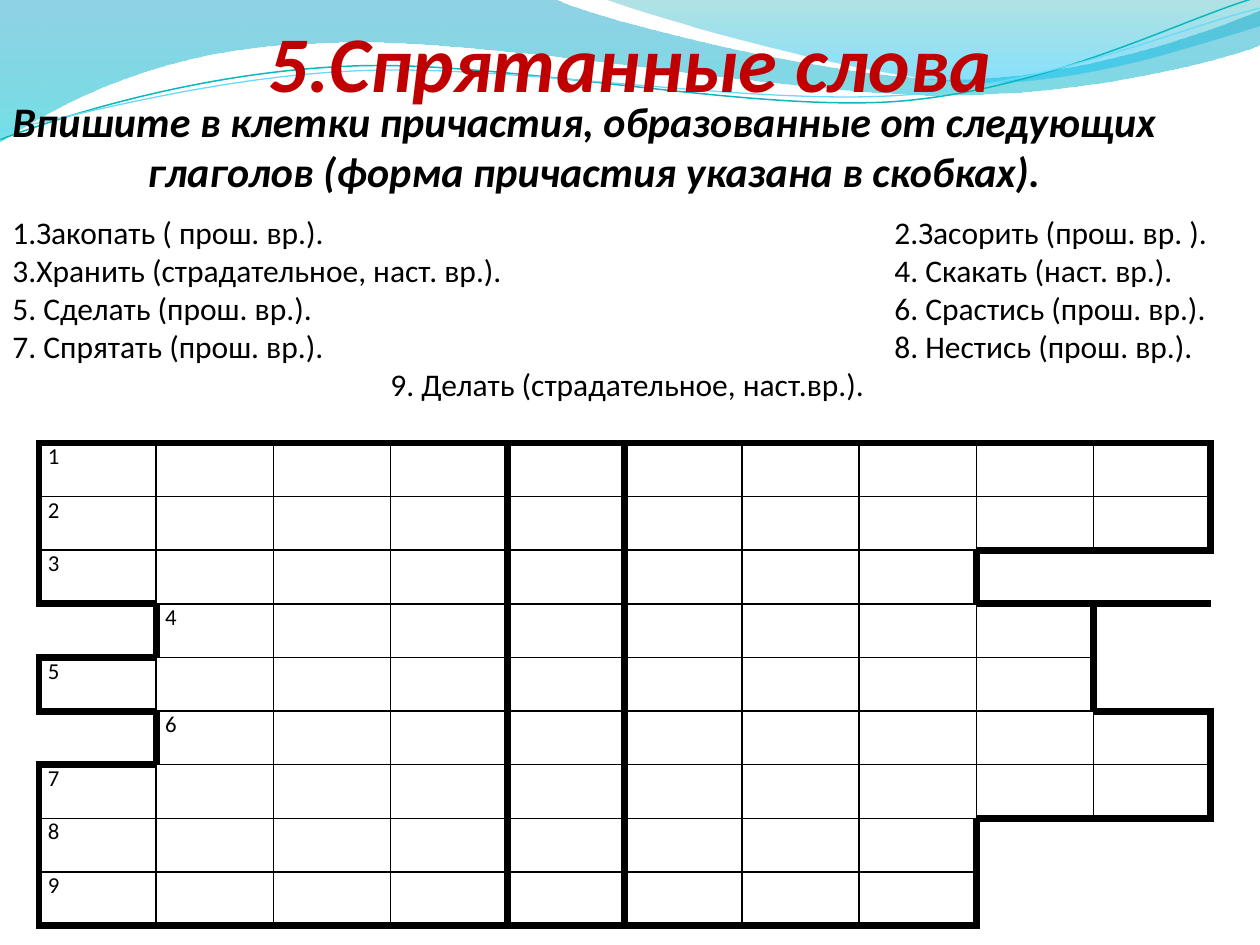
from itertools import chain, product

from lxml import etree
from pptx import Presentation
from pptx.dml.color import RGBColor
from pptx.enum.text import MSO_ANCHOR, MSO_AUTO_SIZE, PP_ALIGN
from pptx.oxml.ns import qn
from pptx.util import Emu, Pt

TOP, MIDDLE, BOTTOM = MSO_ANCHOR.TOP, MSO_ANCHOR.MIDDLE, MSO_ANCHOR.BOTTOM
CENTER, JUSTIFY = PP_ALIGN.CENTER, PP_ALIGN.JUSTIFY
GROW = MSO_AUTO_SIZE.SHAPE_TO_FIT_TEXT

BLACK = RGBColor(0x00, 0x00, 0x00)
RED = RGBColor(0xC0, 0x00, 0x00)
BLUE = RGBColor(0x08, 0x9D, 0xC7)
TURQUOISE = RGBColor(0x00, 0xC6, 0xCF)
TEAL = RGBColor(0x00, 0xA1, 0xA9)
SKY = RGBColor(0x00, 0xC0, 0xF6)
DARK_CYAN = RGBColor(0x0A, 0xB8, 0xBF)
LIGHT_CYAN = RGBColor(0x6A, 0xDA, 0xFA)

FONT = "Calibri"
EMU_PER_PX = 914400 / 126
LINE_TILT = 357.3
THICK, THIN = 4.5, 1

# A wave is a start point, then straight pieces (one point) and Bezier pieces (three).
# Gradient stops are position, colour and opacity in per cent.
WIDE_WAVE = ((0, 0), [
    [(554, -1)],
    [(600, 21), (837, 79), (955, 79)],
    [(1075, 79), (1207, 33), (1260, 11)],
    [(1261, 45)],
    [(1239, 55), (1096, 96), (940, 95)],
    [(784, 95), (481, 35), (324, 43)],
    [(163, 45), (58, 105), (-1, 142)],
], [(0, BLUE, 45), (1, TURQUOISE, 55)])
RIGHT_WAVE = ((604, -1), [
    [(641, 14), (859, 78), (969, 82)],
    [(1079, 87), (1211, 40), (1260, 26)],
    [(1260, 0)],
], [(0, TEAL, 30), (0.8, SKY, 45)])
UPPER_LINE = ((-2, 110), [
    [(58, 90), (199, 52), (350, 53)],
    [(499, 53), (745, 118), (896, 114)],
    [(1049, 109), (1184, 45), (1260, 27)],
], DARK_CYAN, 0.85)
LOWER_LINE = ((-2, 101), [
    [(58, 94), (207, 57), (358, 58)],
    [(509, 58), (750, 112), (902, 108)],
    [(1052, 104), (1188, 52), (1262, 38)],
], LIGHT_CYAN, 0.75)

# Clue text with the position of its tab stop.
CLUES = [
    ("1.Закопать ( прош. вр.).\t2.Засорить (прош. вр. ).", 882),
    ("3.Хранить (страдательное, наст. вр.).\t4. Скакать (наст. вр.).", 882),
    ("5. Сделать (прош. вр.).\t6. Срастись (прош. вр.).", 882),
    ("7. Спрятать (прош. вр.).\t8. Нестись (прош. вр.).", 882),
    ("\t9. Делать (страдательное, наст.вр.).", 378),
]

# First column and end column of each hidden word.
WORDS = [(0, 10), (0, 10), (0, 8), (1, 9), (0, 9), (1, 10), (0, 10), (0, 8), (0, 8)]
COLUMNS = 10
KEY_COLUMN = 4
MERGED = [((2, 8), (2, 9)), ((3, 9), (4, 9)), ((7, 8), (8, 8)), ((7, 9), (8, 9))]


def px(length):
    return Emu(round(length * EMU_PER_PX))


def add_path(slide, left, top, start, pieces, closed):
    """Draw all points as a polygon, then fold each three-point piece into a curve."""
    points = [(px(left + x), px(top + y)) for x, y in chain([start], *pieces)]
    builder = slide.shapes.build_freeform(*points[0])
    builder.add_line_segments(points[1:], close=closed)
    outline = builder.convert_to_shape()
    outline.shadow.inherit = False
    steps = iter(list(outline.element.iter(qn("a:lnTo"))))
    for piece in pieces:
        first, *others = [next(steps) for _ in piece]
        if others:
            first.tag = qn("a:cubicBezTo")
        for step in others:
            first.append(step[0])
            step.getparent().remove(step)
    return outline


def add_waves(slide, left, top):
    for start, pieces, stops in (WIDE_WAVE, RIGHT_WAVE):
        wave = add_path(slide, left, top, start, pieces, True)
        wave.line.fill.background()
        wave.fill.gradient()
        wave.fill.gradient_angle = 270
        for stop, (position, color, _) in zip(wave.fill.gradient_stops, stops):
            stop.position = position
            stop.color.rgb = color
        for color, (_, _, opacity) in zip(wave.element.spPr.iter(qn("a:srgbClr")), stops):
            etree.SubElement(color, qn("a:alpha"), val=str(opacity * 1000))
    for start, pieces, color, width in (UPPER_LINE, LOWER_LINE):
        ribbon = add_path(slide, left, top, start, pieces, False)
        ribbon.rotation = LINE_TILT
        ribbon.fill.background()
        ribbon.line.color.rgb = color
        ribbon.line.width = Pt(width)


def write(paragraph, text, size, color=BLACK, strong=False, align=JUSTIFY):
    paragraph.alignment = align
    run = paragraph.add_run()
    run.text = text
    look = {"name": FONT, "size": Pt(size), "bold": strong, "italic": strong}
    for attribute, value in look.items():
        setattr(run.font, attribute, value)
    run.font.color.rgb = color


def add_frame(slide, box, **settings):
    frame = slide.shapes.add_textbox(*map(px, box)).text_frame
    for attribute, value in settings.items():
        setattr(frame, attribute, value)
    return frame


def add_title(slide, box):
    frame = add_frame(slide, box, word_wrap=True, vertical_anchor=BOTTOM,
                      margin_left=0, margin_right=0, margin_bottom=0)
    write(frame.paragraphs[0], "5.Спрятанные слова", 45, RED, True, CENTER)


def add_task(slide, box):
    frame = add_frame(slide, box, word_wrap=False, vertical_anchor=MIDDLE, auto_size=GROW)
    write(frame.paragraphs[0], "Впишите в клетки причастия, образованные от следующих",
          24, strong=True)
    write(frame.add_paragraph(), "глаголов (форма причастия указана в скобках).",
          24, strong=True, align=CENTER)


def add_clues(slide, box):
    frame = add_frame(slide, box, word_wrap=True, vertical_anchor=MIDDLE, auto_size=GROW)
    for number, (clue, stop) in enumerate(CLUES):
        paragraph = frame.add_paragraph() if number else frame.paragraphs[0]
        properties = paragraph._p.get_or_add_pPr()
        tabs = etree.SubElement(properties, qn("a:tabLst"))
        etree.SubElement(tabs, qn("a:tab"), pos=str(px(stop)), algn="l")
        write(paragraph, clue, 18)


def in_word(row, column):
    return 0 <= row < len(WORDS) and WORDS[row][0] <= column < WORDS[row][1]


def border_width(row, column, side):
    """Thick around the words and the key column, thin within, None outside."""
    down, across = {"L": (0, -1), "R": (0, 1), "T": (-1, 0), "B": (1, 0)}[side]
    inside, beyond = in_word(row, column), in_word(row + down, column + across)
    crosses_key = across and KEY_COLUMN in (column, column + across)
    notch_floor = (row, side) == (2, "B") and column >= 8
    if inside != beyond or crosses_key or notch_floor:
        return THICK
    return THIN if inside else None


def set_borders(cell, row, column):
    properties = cell._tc.get_or_add_tcPr()
    for position, side in enumerate("LRTB"):
        width = border_width(row, column, side)
        line = etree.Element(qn(f"a:ln{side}"), w=str(Pt(width or 0)))
        if width:
            fill = etree.SubElement(line, qn("a:solidFill"))
            etree.SubElement(fill, qn("a:srgbClr"), val=str(BLACK))
        else:
            etree.SubElement(line, qn("a:noFill"))
        properties.insert(position, line)


def add_crossword(slide, box):
    table = slide.shapes.add_table(len(WORDS), COLUMNS, *map(px, box)).table
    table.first_row = table.horz_banding = False
    for column in table.columns:
        column.width = px(box[2] / COLUMNS)
    for row in table.rows:
        row.height = px(box[3] / len(WORDS))
    for row, column in product(range(len(WORDS)), range(COLUMNS)):
        cell = table.cell(row, column)
        cell.margin_left = cell.margin_right = px(9)
        cell.margin_top = cell.margin_bottom = 0
        cell.vertical_anchor = TOP
        cell.fill.background()
        set_borders(cell, row, column)
        if column == WORDS[row][0]:
            write(cell.text_frame.paragraphs[0], str(row + 1), 13)
    for first, last in MERGED:
        table.cell(*first).merge(table.cell(*last))


def main():
    deck = Presentation()
    deck.slide_width, deck.slide_height = px(1260), px(945)
    slide = deck.slides.add_slide(deck.slide_layouts[6])
    add_waves(slide, 0, 0)
    add_title(slide, (0, 0, 1260, 108))
    add_task(slide, (0, 88, 1188, 115))
    add_clues(slide, (0, 206, 1260, 204))
    add_crossword(slide, (39, 443, 1172, 483))
    deck.save("out.pptx")


if __name__ == "__main__":
    main()
